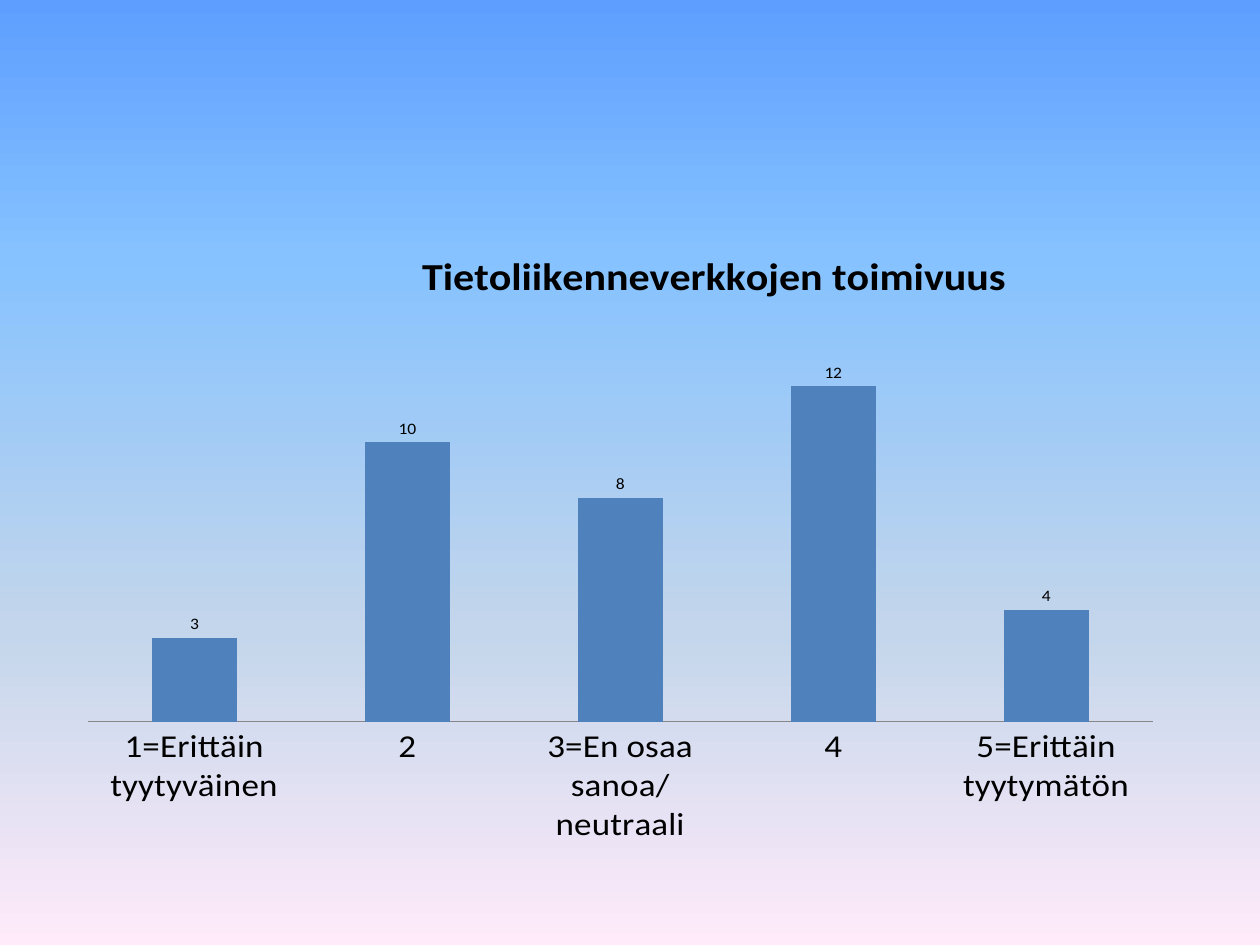
from copy import deepcopy
from typing import NamedTuple

from pptx import Presentation
from pptx.chart.data import CategoryChartData
from pptx.dml.color import RGBColor
from pptx.enum.chart import XL_CHART_TYPE, XL_LABEL_POSITION, XL_TICK_MARK
from pptx.oxml import parse_xml
from pptx.oxml.ns import nsdecls, qn
from pptx.util import Inches, Pt

BLACK = RGBColor(0x00, 0x00, 0x00)
BLUE = RGBColor(0x4F, 0x81, 0xBD)
GRAY = RGBColor(0x87, 0x87, 0x87)
FONT = "Calibri"


class Stop(NamedTuple):
    place: float
    color: RGBColor


class Answer(NamedTuple):
    label: str
    count: int


STOPS = [
    Stop(0, RGBColor(0x5E, 0x9E, 0xFF)),
    Stop(0.27, RGBColor(0x85, 0xC2, 0xFF)),
    Stop(0.67, RGBColor(0xC4, 0xD6, 0xEB)),
    Stop(1, RGBColor(0xFF, 0xEB, 0xFA)),
]
ANSWERS = [
    Answer("1=Erittäin tyytyväinen", 3),
    Answer("2", 10),
    Answer("3=En osaa sanoa/neutraali", 8),
    Answer("4", 12),
    Answer("5=Erittäin tyytymätön", 4),
]


def style(font, size: float = 10, bold: bool = False) -> None:
    font.name = FONT
    font.size = Pt(size)
    font.bold = bold
    font.color.rgb = BLACK


def write(frame, text: str, **form) -> None:
    """Put formatted text in the first paragraph of a frame."""
    run = frame.paragraphs[0].add_run()
    run.text = text
    style(run.font, **form)


def place(part, **where) -> None:
    """Give a chart title or plot area a manual layout, in chart fractions."""
    modes = "".join(f'<c:{key}Mode val="edge"/>' for key in "xy")
    sizes = "".join(f'<c:{key} val="{val}"/>' for key, val in where.items())
    inner = '<c:layoutTarget val="inner"/>' if "w" in where else ""
    layout = parse_xml(
        f'<c:layout {nsdecls("c")}><c:manualLayout>{inner}{modes}{sizes}'
        "</c:manualLayout></c:layout>"
    )
    for old in part.findall(qn("c:layout")):
        part.remove(old)
    text = part.find(qn("c:tx"))
    if text is None:
        part.insert(0, layout)
    else:
        text.addnext(layout)


def paint(slide) -> None:
    """Fill the background from top to bottom."""
    fill = slide.background.fill
    fill.gradient()
    fill.gradient_angle = 270
    group = slide.element.find(".//" + qn("a:gsLst"))
    while len(group) < len(STOPS):
        group.append(deepcopy(group[0]))
    for mark, stop in zip(fill.gradient_stops, STOPS):
        mark.position = stop.place
        mark.color.rgb = stop.color


def draw(slide) -> None:
    """Add the column chart of answers."""
    data = CategoryChartData()
    data.categories = [item.label for item in ANSWERS]
    data.add_series("Series 1", [item.count for item in ANSWERS])
    chart = slide.shapes.add_chart(
        XL_CHART_TYPE.COLUMN_CLUSTERED,
        Inches(0.5), Inches(1.75), Inches(9), Inches(4.95), data,
    ).chart
    style(chart.font)
    chart.has_legend = False

    chart.has_title = True
    title = chart.chart_title
    write(title.text_frame, "Tietoliikenneverkkojen toimivuus", size=24, bold=True)
    title.include_in_layout = False
    place(title._element, x=0.31, y=0.04)
    place(chart._chartSpace.find(".//" + qn("c:plotArea")),
          x=0.022, y=0.194, w=0.939, h=0.69)

    axis = chart.category_axis
    axis.major_tick_mark = XL_TICK_MARK.NONE
    axis.format.line.color.rgb = GRAY
    style(axis.tick_labels.font, size=20)
    chart.value_axis.visible = False
    chart.value_axis.has_major_gridlines = False

    plot = chart.plots[0]
    plot.vary_by_categories = False
    plot.gap_width = 150
    plot.overlap = -25
    plot.has_data_labels = True
    labels = plot.data_labels
    labels.show_value = True
    labels.position = XL_LABEL_POSITION.OUTSIDE_END
    style(labels.font)
    fill = plot.series[0].format.fill
    fill.solid()
    fill.fore_color.rgb = BLUE


def main() -> None:
    deck = Presentation()
    deck.slide_width = Inches(10)
    deck.slide_height = Inches(7.5)
    slide = deck.slides.add_slide(deck.slide_layouts[6])
    paint(slide)
    draw(slide)
    deck.save("out.pptx")


if __name__ == "__main__":
    main()
